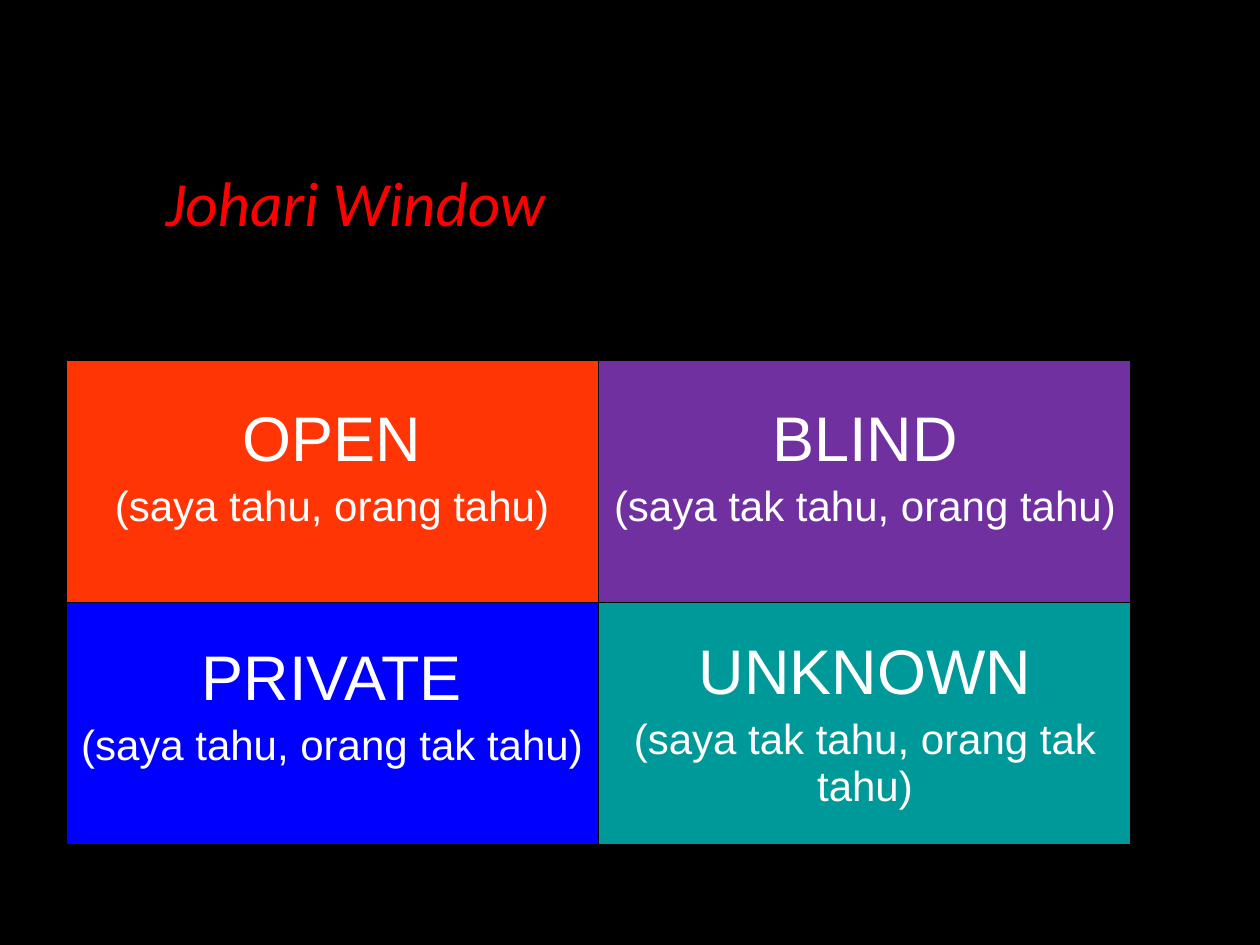
from dataclasses import dataclass

from lxml.etree import SubElement
from pptx import Presentation
from pptx.dml.color import RGBColor as RGB
from pptx.enum.text import MSO_ANCHOR as Anchor, MSO_AUTO_SIZE as Fit, PP_ALIGN as Align
from pptx.oxml.ns import qn
from pptx.util import Inches, Pt


@dataclass(frozen=True)
class Theme:
    back: str = "000000"
    text: str = "FFFFFF"
    title: str = "FF0000"
    head: str = "Calibri"
    body: str = "Arial"
    big: float = 36
    small: float = 24
    gap: float = 4.8
    outer: float = 2.25
    inner: float = 1


THEME = Theme()

# Label, note, fill, top margin in inches
PANES = [
    [("OPEN", "(saya tahu, orang tahu)", "FF3505", 0.36),
     ("BLIND", "(saya tak tahu, orang tahu)", "7030A0", 0.36)],
    [("PRIVATE", "(saya tahu, orang tak tahu)", "0000FF", 0.33),
     ("UNKNOWN", "(saya tak tahu, orang tak tahu)", "009999", 0.28)],
]


def put_text(para, text, size=THEME.big, font=THEME.body, color=THEME.text,
             italic=False, before=0):
    para.alignment = Align.CENTER
    para.space_before = Pt(before)
    run = para.add_run()
    run.text = text
    run.font.size = Pt(size)
    run.font.name = font
    run.font.italic = italic
    run.font.color.rgb = RGB.from_string(color)


def set_edges(cell, row, col):
    """Draw thick outer and thin inner borders on a cell of the 2 x 2 grid."""
    outer = {"lnL": col == 0, "lnR": col == 1, "lnT": row == 0, "lnB": row == 1}
    props = cell._tc.get_or_add_tcPr()
    for tag, edge in outer.items():
        width = Pt(THEME.outer if edge else THEME.inner)
        line = SubElement(props, qn(f"a:{tag}"), w=str(int(width)))
        fill = SubElement(line, qn("a:solidFill"))
        SubElement(fill, qn("a:srgbClr"), val=THEME.back)


def fill_pane(cell, label, note, color, top):
    cell.fill.solid()
    cell.fill.fore_color.rgb = RGB.from_string(color)
    cell.vertical_anchor = Anchor.TOP
    cell.margin_top = Inches(top)
    frame = cell.text_frame
    put_text(frame.paragraphs[0], label)
    put_text(frame.add_paragraph(), note, size=THEME.small, before=THEME.gap)


def add_window(slide):
    table = slide.shapes.add_table(
        2, 2, Inches(0.52), Inches(2.85), Inches(8.46), Inches(3.86)).table
    for row, panes in enumerate(PANES):
        for col, pane in enumerate(panes):
            cell = table.cell(row, col)
            set_edges(cell, row, col)
            fill_pane(cell, *pane)


def set_title(slide, text):
    title = slide.shapes.title
    title.left, title.top = Inches(0.42), Inches(1.25)
    title.width, title.height = Inches(4.8), Inches(1.1)
    frame = title.text_frame
    frame.word_wrap = False
    frame.auto_size = Fit.NONE
    frame.vertical_anchor = Anchor.TOP
    put_text(frame.paragraphs[0], text, font=THEME.head, color=THEME.title, italic=True)


def main():
    deck = Presentation()
    deck.slide_width, deck.slide_height = Inches(10), Inches(7.5)
    slide = deck.slides.add_slide(deck.slide_layouts[5])
    back = slide.background.fill
    back.solid()
    back.fore_color.rgb = RGB.from_string(THEME.back)
    add_window(slide)
    set_title(slide, "Johari Window")
    deck.save("out.pptx")


if __name__ == "__main__":
    main()
